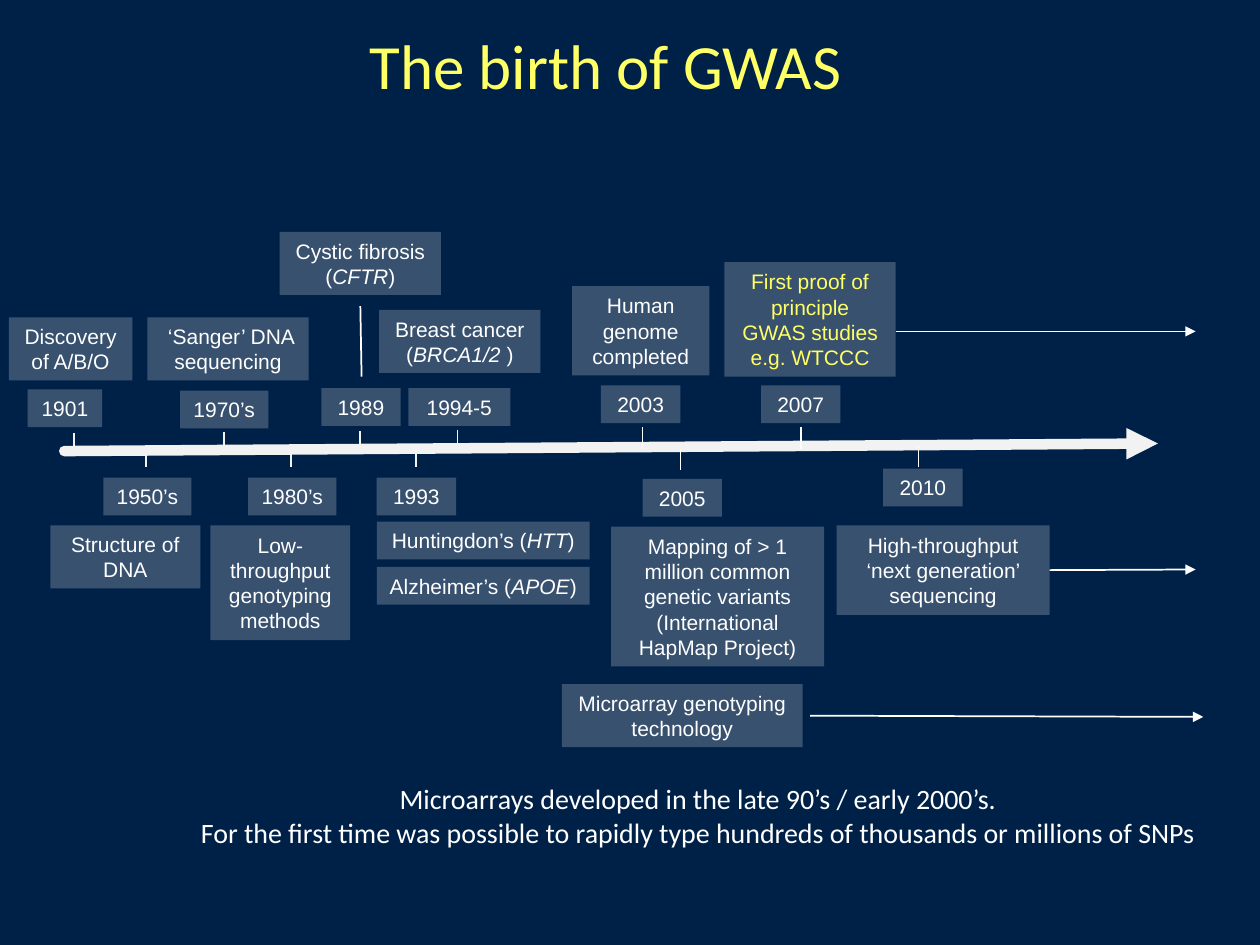
from lxml import etree
from pptx import Presentation
from pptx import util as u
from pptx.dml.color import RGBColor
from pptx.enum import shapes, text
from pptx.oxml.ns import qn

WHITE, PALE, YELLOW = "FFFFFF", "F2F2F2", "FFFF66"
RIGHT = 3


def color(value):
    return RGBColor.from_string(value)


def assign(target, values):
    for name, value in values.items():
        setattr(target, name, value)


class Timeline:
    frame = {"word_wrap": True, "auto_size": text.MSO_AUTO_SIZE.SHAPE_TO_FIT_TEXT,
             "vertical_anchor": text.MSO_ANCHOR.MIDDLE}
    box_font = {"name": "Arial", "size": u.Pt(12)}

    def __init__(self, prs, background):
        self.s = prs.slides.add_slide(prs.slide_layouts[6])
        fill = self.s.background.fill
        fill.solid()
        fill.fore_color.rgb = color(background)

    def fill_text(self, sp, content, font, ink, **frame):
        tf = sp.text_frame
        assign(tf, {**self.frame, **frame})
        for i, line in enumerate(content.split("\n")):
            p = tf.paragraphs[0] if i == 0 else tf.add_paragraph()
            p.alignment = text.PP_ALIGN.CENTER
            for j, part in enumerate(line.split("*")):
                r = p.add_run()
                r.text = part
                assign(r.font, {**font, "italic": j % 2 == 1})
                r.font.color.rgb = color(ink)

    def label(self, at, content, size, ink, **frame):
        sp = self.s.shapes.add_textbox(*map(u.Inches, at))
        self.fill_text(sp, content, {"name": "Calibri", "size": u.Pt(size)}, ink, **frame)

    def box(self, at, content, ink=WHITE):
        sp = self.s.shapes.add_shape(shapes.MSO_SHAPE.RECTANGLE, *map(u.Inches, at))
        sp.shadow.inherit = False
        sp.line.fill.background()
        sp.fill.solid()
        sp.fill.fore_color.rgb = color(WHITE)
        clr = sp._element.spPr.find(qn("a:solidFill"))[0]
        etree.SubElement(clr, qn("a:alpha"), val="22000")
        self.fill_text(sp, content, self.box_font, ink)
        return sp

    def line(self, start, end, ink=WHITE, width=1, arrow=False, cap="flat", source=None):
        c = self.s.shapes.add_connector(
            shapes.MSO_CONNECTOR.STRAIGHT, *map(u.Inches, (*start, *end)))
        if source is not None:
            c.begin_connect(source, RIGHT)
        c.line.width = u.Pt(width)
        c.line.color.rgb = color(ink)
        ln = c._element.spPr.find(qn("a:ln"))
        ln.set("cap", cap)
        if arrow:
            etree.SubElement(ln, qn("a:tailEnd"), type="triangle")
        etree.SubElement(c._element.spPr, qn("a:effectLst"))

    def tick(self, x, top, ink):
        self.line((x, top), (x, top + 0.17), ink)


YEARS = [
    (0.22, 3.09, 0.59, "1901"), (0.82, 3.79, 0.7, "1950’s"),
    (1.43, 3.1, 0.7, "1970’s"), (1.97, 3.79, 0.7, "1980’s"),
    (2.55, 3.08, 0.63, "1989"), (2.99, 3.79, 0.63, "1993"),
    (3.24, 3.08, 0.81, "1994-5"), (4.77, 3.06, 0.63, "2003"),
    (5.1, 3.8, 0.63, "2005"), (6.04, 3.06, 0.63, "2007"),
    (7.01, 3.72, 0.63, "2010"),
]
EVENTS = [
    ((0.07, 2.52, 0.98, 0.5), "Discovery of A/B/O"),
    ((0.4, 4.17, 1.19, 0.5), "Structure of DNA"),
    ((1.17, 2.52, 1.28, 0.5), " ‘Sanger’ DNA sequencing"),
    ((1.67, 4.17, 1.11, 0.91), "Low-throughput genotyping methods"),
    ((2.22, 1.84, 1.28, 0.5), "Cystic fibrosis (*CFTR*)"),
    ((2.99, 4.14, 1.69, 0.3), "Huntingdon’s (*HTT*)"),
    ((2.99, 4.5, 1.69, 0.3), "Alzheimer’s (*APOE*)"),
    ((3.01, 2.46, 1.28, 0.5), "Breast cancer (*BRCA1/2 *)"),
    ((4.54, 2.27, 1.09, 0.71), "Human genome completed"),
    ((4.85, 4.18, 1.69, 1.11),
     "Mapping of > 1 million common genetic variants\n(International HapMap Project)"),
    ((4.46, 5.43, 1.91, 0.5), "Microarray genotyping technology"),
]
TICKS = [
    (0.59, 3.44, PALE), (1.16, 3.54, PALE), (1.78, 3.43, PALE), (2.31, 3.54, PALE),
    (2.86, 3.42, PALE), (3.3, 3.54, PALE), (3.63, 3.41, PALE), (5.1, 3.39, WHITE),
    (5.4, 3.56, WHITE), (6.36, 3.39, WHITE), (7.29, 3.54, WHITE),
]


def main():
    prs = Presentation()
    assign(prs, {"slide_width": u.Inches(10), "slide_height": u.Inches(7.5)})
    t = Timeline(prs, "002147")
    t.label((0.99, 0.14, 7.63, 0.74), "The birth of GWAS", 36, YELLOW,
            auto_size=text.MSO_AUTO_SIZE.NONE)
    t.line((0.51, 3.58), (9.19, 3.52), PALE, 6, arrow=True, cap="rnd")
    for tick in TICKS:
        t.tick(*tick)
    for x, y, width, year in YEARS:
        t.box((x, y, width, 0.3), year)
    for at, content in EVENTS:
        t.box(at, content)
    t.box((5.75, 2.08, 1.36, 0.91),
          "First proof of principle GWAS studies e.g. WTCCC", "FFFF65")
    sequencing = t.box((6.64, 4.17, 1.69, 0.71),
                       "High-throughput ‘next generation’ sequencing")
    t.line((2.86, 2.43), (2.87, 2.99))
    t.line((7.11, 2.63), (9.49, 2.63), arrow=True)
    t.line((8.33, 4.52), (9.49, 4.52), arrow=True, source=sequencing)
    t.line((6.43, 5.68), (9.55, 5.69), arrow=True)
    t.label((1.4, 6.15, 8.28, 0.64),
            "Microarrays developed in the late 90’s / early 2000’s.\n"
            "For the first time was possible to rapidly type hundreds of thousands"
            " or millions of SNPs", 16, WHITE, word_wrap=False)
    prs.save("out.pptx")


if __name__ == "__main__":
    main()
